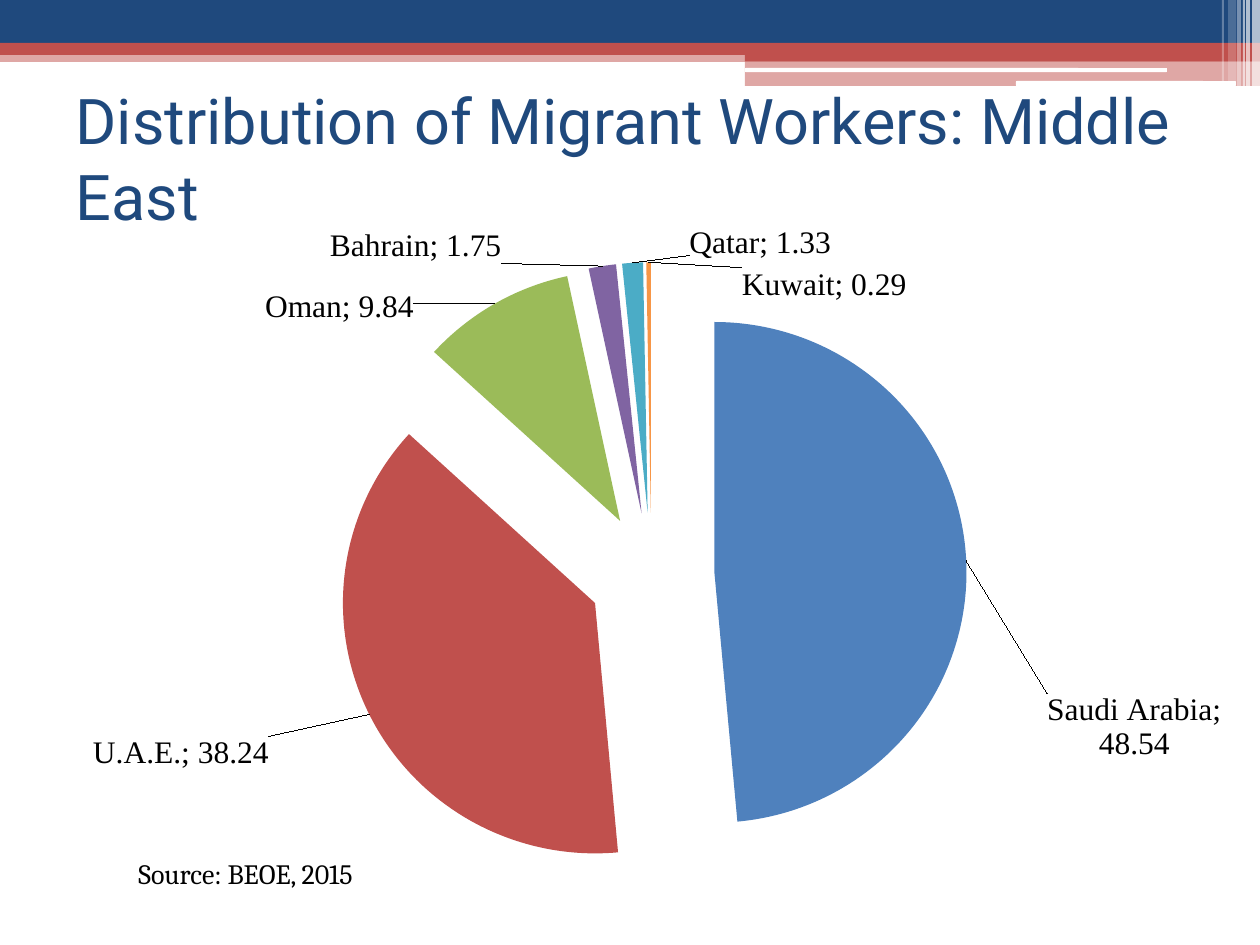
import pptx
import pptx.chart.data
import pptx.dml.color
import pptx.enum.chart
import pptx.enum.shapes
import pptx.enum.text
import pptx.oxml
import pptx.oxml.ns
import pptx.util

RGB = pptx.dml.color.RGBColor
NAVY = RGB(0x1F, 0x49, 0x7D)
RED = RGB(0xC0, 0x50, 0x4D)
WHITE = RGB(0xFF, 0xFF, 0xFF)
BLACK = RGB(0x00, 0x00, 0x00)
BLUE = RGB(0x4F, 0x81, 0xBD)
GREEN = RGB(0x9B, 0xBB, 0x59)
PURPLE = RGB(0x80, 0x64, 0xA2)
TEAL = RGB(0x4B, 0xAC, 0xC6)
ORANGE = RGB(0xF7, 0x96, 0x46)

TITLE = "Distribution of Migrant Workers: Middle East"
SOURCE = "Source: BEOE, 2015"

# Country, value, colour, label shift from the slice's outer edge (px)
SLICES = [
    ("Saudi Arabia", 48.54, BLUE, (74, 168)),
    ("U.A.E.", 38.24, RED, (-94, 19)),
    ("Oman", 9.84, GREEN, (-77, 27)),
    ("Bahrain", 1.75, PURPLE, (-100, 5)),
    ("Qatar", 1.33, TEAL, (128, 0)),
    ("Kuwait", 0.29, ORANGE, (176, 47)),
]
EXPLOSION = 25
CHART_BOX = (42, 221, 1187, 672)
PLOT = {"x": 0.248, "y": 0.055, "w": 0.531, "h": 0.938}

# Banner: left, top, width, height (px), colour, opacity in percent
BANDS = [
    (0, 50, 1260, 12, RED, 50),
    (0, 0, 1260, 43, NAVY, 100),
    (0, 43, 1260, 12, RED, 100),
    (745, 49, 515, 12, RED, 100),
    (745, 61, 515, 25, RED, 50),
]
ROUNDED_LINES = [
    (745, 68, 422, 4, WHITE, 100),
    (1016, 81, 220, 5, WHITE, 100),
]
STRIPES = [  # left, width, height, opacity
    (1252, 8, 86, 65),
    (1246, 4, 86, 65),
    (1243, 2, 86, 60),
    (1237, 4, 86, 40),
    (1228, 8, 81, 20),
    (1222, 2, 81, 30),
]

EMU_PER_PX = 914400 / 126


def px(*lengths):
    return [pptx.util.Emu(round(length * EMU_PER_PX)) for length in lengths]


def xml(text):
    namespaces = pptx.oxml.ns.nsdecls("a", "c")
    return pptx.oxml.parse_xml(text.replace(">", f" {namespaces}>", 1))


def add_bar(page, kind, left, top, width, height, color, opacity):
    bar = page.shapes.add_shape(kind, *px(left, top, width, height))
    bar.shadow.inherit = False
    bar.line.fill.background()
    bar.fill.solid()
    bar.fill.fore_color.rgb = color
    if opacity < 100:
        for node in bar.fill._xPr.iter(pptx.oxml.ns.qn("a:srgbClr")):
            node.append(xml(f'<a:alpha val="{opacity * 1000}"></a:alpha>'))


def write_text(box, text, anchor, font):
    frame = box.text_frame
    frame.word_wrap = True
    frame.vertical_anchor = anchor
    para = frame.paragraphs[0]
    para.alignment = pptx.enum.text.PP_ALIGN.LEFT
    span = para.add_run()
    span.text = text
    set_font(span.font, font)


def set_font(font, values):
    for name, value in values.items():
        if name == "color":
            font.color.rgb = value
        else:
            setattr(font, name, value)


def label_options(position):
    flags = {"LegendKey": 0, "Val": 1, "CatName": 1, "SerName": 0,
             "Percent": 0, "BubbleSize": 0}
    shows = "".join(f'<c:show{name} val="{on}"/>' for name, on in flags.items())
    return (f'<c:dLblPos val="{position}"/>{shows}'
            '<c:separator>; </c:separator>')


def build_labels():
    number = '<c:numFmt formatCode="0.00" sourceLinked="0"/>'
    options = label_options("outEnd")
    labels = ""
    for index, (_, _, _, (right, down)) in enumerate(SLICES):
        across, along = right / CHART_BOX[2], down / CHART_BOX[3]
        labels += (
            f'<c:dLbl><c:idx val="{index}"/><c:layout><c:manualLayout>'
            f'<c:x val="{across:.3f}"/><c:y val="{along:.3f}"/>'
            f'</c:manualLayout></c:layout>{number}{options}</c:dLbl>')
    return xml(f'<c:dLbls>{labels}{number}{options}'
               '<c:showLeaderLines val="1"/></c:dLbls>')


def add_pie(page):
    data = pptx.chart.data.CategoryChartData(number_format="0.00")
    data.categories = [country for country, *_ in SLICES]
    data.add_series("Series 1", [value for _, value, *_ in SLICES])
    chart = page.shapes.add_chart(
        pptx.enum.chart.XL_CHART_TYPE.PIE, *px(*CHART_BOX), data).chart
    chart.has_legend = False
    chart.has_title = False
    set_font(chart.font, {"name": "Times New Roman",
                          "size": pptx.util.Pt(18), "color": BLACK})

    # Slice colours, gaps and labels
    plot = chart.plots[0]
    plot.vary_by_categories = True
    series = plot.series[0]
    for index, (_, _, color, _) in enumerate(SLICES):
        fill = series.points[index].format.fill
        fill.solid()
        fill.fore_color.rgb = color
    node = series._element
    node.xpath("c:dPt")[0].addprevious(
        xml(f'<c:explosion val="{EXPLOSION}"></c:explosion>'))
    node.xpath("c:cat")[0].addprevious(build_labels())

    # Fixed plot area
    area = chart._chartSpace.xpath("c:chart/c:plotArea")[0]
    for layout in area.xpath("c:layout"):
        area.remove(layout)
    sizes = "".join(f'<c:{key} val="{value}"/>' for key, value in PLOT.items())
    area.insert(0, xml(
        '<c:layout><c:manualLayout><c:layoutTarget val="inner"/>'
        '<c:xMode val="edge"/><c:yMode val="edge"/>'
        f'{sizes}</c:manualLayout></c:layout>'))


def main():
    deck = pptx.Presentation()
    deck.slide_width, deck.slide_height = px(1260, 945)
    page = deck.slides.add_slide(deck.slide_layouts[5])
    shape = pptx.enum.shapes.MSO_SHAPE
    anchor = pptx.enum.text.MSO_ANCHOR

    # Banner
    for band in BANDS:
        add_bar(page, shape.RECTANGLE, *band)
    for line in ROUNDED_LINES:
        add_bar(page, shape.ROUNDED_RECTANGLE, *line)
    for left, width, height, opacity in STRIPES:
        add_bar(page, shape.RECTANGLE, left, 0, width, height, WHITE, opacity)

    # Title
    title = page.shapes.title
    title.left, title.top, title.width, title.height = px(63, 84, 1197, 147)
    write_text(title, TITLE, anchor.MIDDLE,
               {"name": "Roboto", "size": pptx.util.Pt(36), "color": NAVY})

    # Chart and its source
    add_pie(page)
    source = page.shapes.add_textbox(*px(126, 850, 357, 47))
    write_text(source, SOURCE, anchor.TOP,
               {"name": "Cambria", "size": pptx.util.Pt(16), "color": BLACK})

    deck.save("out.pptx")


if __name__ == "__main__":
    main()
